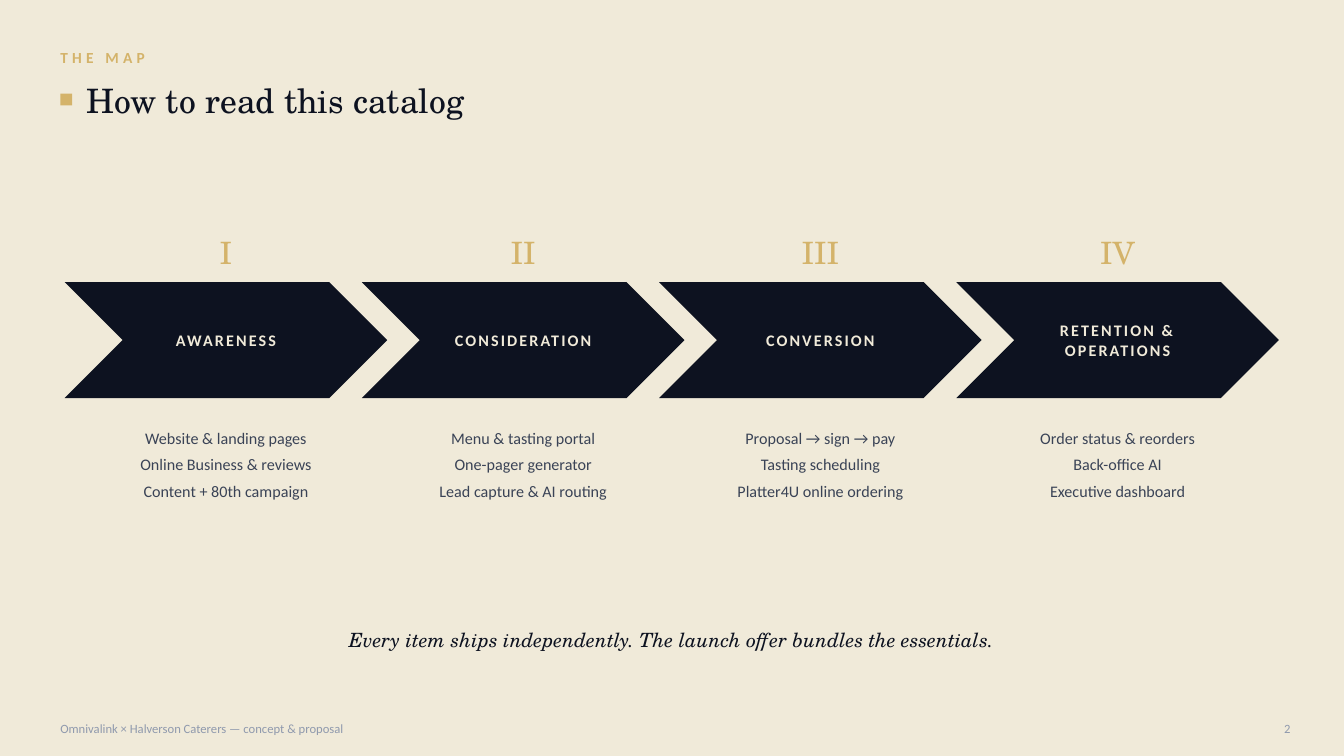
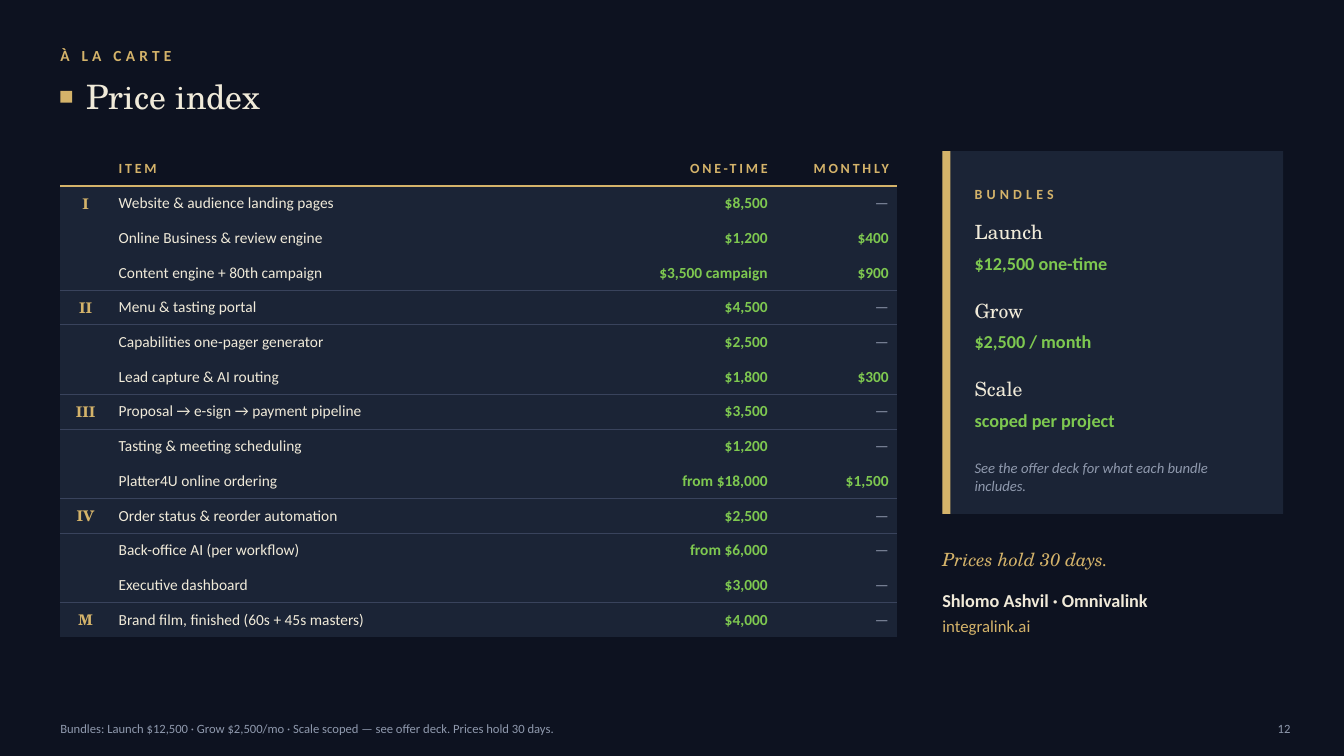
import lxml.etree
import pptx
import pptx.dml.color
import pptx.enum.shapes
import pptx.enum.text
import pptx.oxml.ns
import pptx.util

Cm = pptx.util.Cm
Pt = pptx.util.Pt
RGBColor = pptx.dml.color.RGBColor
Align = pptx.enum.text.PP_ALIGN
Anchor = pptx.enum.text.MSO_ANCHOR
Shape = pptx.enum.shapes.MSO_SHAPE
qn = pptx.oxml.ns.qn

CREAM = RGBColor(0xF0, 0xEA, 0xD9)
NAVY = RGBColor(0x0D, 0x12, 0x20)
PANEL = RGBColor(0x1B, 0x24, 0x36)
RULE = RGBColor(0x39, 0x43, 0x5C)
SLATE = RGBColor(0x3A, 0x43, 0x56)
GOLD = RGBColor(0xD4, 0xB3, 0x6A)
GREEN = RGBColor(0x7E, 0xC8, 0x50)
MUTED = RGBColor(0x8F, 0x99, 0xAD)

SANS = "Calibri"
SERIF = "TeX Gyre Schola"
NO_GRID_STYLE = "{2D5ABB26-0587-4C30-8999-92F81FD0307C}"

NO_MARGINS = dict(margin_left=0, margin_top=0, margin_right=0, margin_bottom=0)
CELL_FORMAT = dict(
    margin_left=Cm(0.2), margin_top=Cm(0.08), margin_right=Cm(0.2), margin_bottom=Cm(0.08),
    vertical_anchor=Anchor.MIDDLE,
)


def style(name, size, color, align=Align.LEFT, after=0, spacing=0, **font):
    """Format values of a paragraph; spacing is the letter spacing in points."""
    return dict(
        font=dict(name=name, size=Pt(size), **font),
        color=color,
        para=dict(alignment=align, space_after=Pt(after)),
        spacing=spacing,
    )


KICKER = style(SANS, 11, GOLD, spacing=3, bold=True)
FOOTER = style(SANS, 9, MUTED)
PAGE_NUMBER = style(SANS, 9, MUTED, Align.RIGHT)
STAGE_NUMBER = style(SERIF, 22, GOLD, Align.CENTER)
STAGE_NAME = style(SANS, 11.5, CREAM, Align.CENTER, spacing=1.5, bold=True)
STAGE_ITEM = style(SANS, 11.5, SLATE, Align.CENTER, after=5)
CLOSING = style(SERIF, 14, NAVY, Align.CENTER, italic=True)
HEAD = style(SANS, 10, GOLD, spacing=2, bold=True)
HEAD_RIGHT = style(SANS, 10, GOLD, Align.RIGHT, spacing=2, bold=True)
GROUP = style(SERIF, 10.5, GOLD, Align.CENTER, bold=True)
ITEM = style(SANS, 11, CREAM)
PRICE = style(SANS, 11, GREEN, Align.RIGHT, bold=True)
NO_PRICE = style(SANS, 11, MUTED, Align.RIGHT)
BUNDLES_HEAD = style(SANS, 10, GOLD, spacing=3, bold=True)
BUNDLE_NAME = style(SERIF, 14, CREAM)
BUNDLE_PRICE = style(SANS, 13, GREEN, bold=True)
BUNDLE_NOTE = style(SANS, 10.5, MUTED, italic=True)
VALIDITY = style(SERIF, 13, GOLD, italic=True)
CONTACT = style(SANS, 13, CREAM, after=3, bold=True)
ADDRESS = style(SANS, 12, GOLD, after=3)

STAGES = [
    ("I", "AWARENESS",
     ["Website & landing pages", "Online Business & reviews", "Content + 80th campaign"]),
    ("II", "CONSIDERATION",
     ["Menu & tasting portal", "One-pager generator", "Lead capture & AI routing"]),
    ("III", "CONVERSION",
     ["Proposal → sign → pay", "Tasting scheduling", "Platter4U online ordering"]),
    ("IV", "RETENTION & OPERATIONS",
     ["Order status & reorders", "Back-office AI", "Executive dashboard"]),
]

PRICES = [
    ("I", "Website & audience landing pages", "$8,500", "—"),
    ("", "Online Business & review engine", "$1,200", "$400"),
    ("", "Content engine + 80th campaign", "$3,500 campaign", "$900"),
    ("II", "Menu & tasting portal", "$4,500", "—"),
    ("", "Capabilities one-pager generator", "$2,500", "—"),
    ("", "Lead capture & AI routing", "$1,800", "$300"),
    ("III", "Proposal → e-sign → payment pipeline", "$3,500", "—"),
    ("", "Tasting & meeting scheduling", "$1,200", "—"),
    ("", "Platter4U online ordering", "from $18,000", "$1,500"),
    ("IV", "Order status & reorder automation", "$2,500", "—"),
    ("", "Back-office AI (per workflow)", "from $6,000", "—"),
    ("", "Executive dashboard", "$3,000", "—"),
    ("M", "Brand film, finished (60s + 45s masters)", "$4,000", "—"),
]

BUNDLES = [
    ("Launch", "$12,500 one-time"),
    ("Grow", "$2,500 / month"),
    ("Scale", "scoped per project"),
]


def assign(target, values):
    for name, value in values.items():
        setattr(target, name, value)


def write(para, text, look):
    assign(para, look["para"])
    if not text:
        # An empty line keeps its size only through its end mark.
        mark = lxml.etree.SubElement(para._p, qn("a:endParaRPr"))
        mark.set("sz", str(look["font"]["size"].centipoints))
        return
    span = para.add_run()
    span.text = text
    assign(span.font, look["font"])
    span.font.color.rgb = look["color"]
    if look["spacing"]:
        span._r.get_or_add_rPr().set("spc", str(int(look["spacing"] * 100)))


def add_border(cell, side, color, width):
    """Draw one cell edge; call it before the cell gets its fill."""
    line = lxml.etree.SubElement(
        cell._tc.get_or_add_tcPr(), qn("a:" + side), w=str(Pt(width)))
    fill = lxml.etree.SubElement(line, qn("a:solidFill"))
    lxml.etree.SubElement(fill, qn("a:srgbClr"), val=str(color))


class Catalog:
    def __init__(self):
        self.deck = pptx.Presentation()
        assign(self.deck, dict(slide_width=Cm(33.87), slide_height=Cm(19.05)))
        self.page = None

    def start_page(self, color):
        self.page = self.deck.slides.add_slide(self.deck.slide_layouts[6])
        fill = self.page.background.fill
        fill.solid()
        fill.fore_color.rgb = color

    def text(self, left, top, width, height, *lines, anchor=Anchor.MIDDLE):
        """Add a text box; each line is a (text, style) pair."""
        box = self.page.shapes.add_textbox(Cm(left), Cm(top), Cm(width), Cm(height))
        frame = box.text_frame
        assign(frame, dict(word_wrap=True, vertical_anchor=anchor, **NO_MARGINS))
        for index, line in enumerate(lines):
            write(frame.add_paragraph() if index else frame.paragraphs[0], *line)

    def shape(self, left, top, width, height, color, kind=Shape.RECTANGLE):
        box = self.page.shapes.add_shape(kind, Cm(left), Cm(top), Cm(width), Cm(height))
        box.shadow.inherit = False
        box.fill.solid()
        box.fill.fore_color.rgb = color
        box.line.fill.background()
        return box

    def chevron(self, left, top, width, height, label):
        frame = self.shape(left, top, width, height, NAVY, Shape.CHEVRON).text_frame
        assign(frame, dict(word_wrap=True, vertical_anchor=Anchor.MIDDLE))
        write(frame.paragraphs[0], label, STAGE_NAME)

    def header(self, kicker, title, ink, kicker_top, title_top, square_top):
        self.text(1.52, kicker_top, 20.32, 0.76, (kicker, KICKER))
        self.shape(1.52, square_top, 0.3, 0.3, GOLD)
        self.text(2.18, title_top, 20.32, 1.4, (title, style(SERIF, 24, ink)))

    def footer(self, note, number):
        self.text(1.52, 17.98, 25.4, 0.76, (note, FOOTER))
        self.text(31.5, 17.98, 1.02, 0.76, (str(number), PAGE_NUMBER))

    def cell(self, cell, text, look, color, border=None):
        assign(cell, CELL_FORMAT)
        write(cell.text_frame.paragraphs[0], text, look)
        if border:
            add_border(cell, *border)
        cell.fill.solid()
        cell.fill.fore_color.rgb = color

    def price_table(self, left, top, widths, height):
        count = len(PRICES) + 1
        frame = self.page.shapes.add_table(
            count, len(widths), Cm(left), Cm(top), Cm(sum(widths)), Cm(height))
        table = frame.table
        assign(table, dict(first_row=False, horz_banding=False))
        table._tbl.tblPr.find(qn("a:tableStyleId")).text = NO_GRID_STYLE
        for column, width in zip(table.columns, widths):
            column.width = Cm(width)
        for row in table.rows:
            row.height = Cm(height) // count

        heads = ("", "ITEM", "ONE-TIME", "MONTHLY")
        for column, head in enumerate(heads):
            look = HEAD_RIGHT if column > 1 else HEAD
            self.cell(table.cell(0, column), head, look, NAVY, ("lnB", GOLD, 1))
        for row, values in enumerate(PRICES, 1):
            starts_group = values[0] and row > 1
            border = ("lnT", RULE, 0.75) if starts_group else None
            for column, value in enumerate(values):
                look = (GROUP, ITEM, PRICE, PRICE)[column]
                if value == "—":
                    look = NO_PRICE
                self.cell(table.cell(row, column), value, look, PANEL, border)


def add_map_page(catalog):
    catalog.start_page(CREAM)
    catalog.header("THE MAP", "How to read this catalog", NAVY, 1.07, 1.83, 2.36)
    for index, (number, name, items) in enumerate(STAGES):
        left = 1.63 + 7.49 * index
        catalog.text(left + 0.89, 5.54, 6.35, 1.27, (number, STAGE_NUMBER),
                     anchor=Anchor.BOTTOM)
        catalog.chevron(left, 7.11, 8.13, 2.92, name)
        catalog.text(left + 0.38, 10.8, 7.37, 3.3,
                     *[(item, STAGE_ITEM) for item in items], anchor=Anchor.TOP)
    catalog.text(
        3.81, 15.62, 26.24, 1.02,
        ("Every item ships independently. The launch offer bundles the essentials.", CLOSING))
    catalog.footer("Omnivalink × Halverson Caterers — concept & proposal", 2)


def add_price_page(catalog):
    catalog.start_page(NAVY)
    catalog.header("À LA CARTE", "Price index", CREAM, 1.02, 1.73, 2.29)
    catalog.price_table(1.52, 3.81, (1.27, 12.7, 4.06, 3.05), 12.26)

    side, inner, inner_width = 23.75, 24.56, 7.06
    catalog.shape(side, 3.81, 8.59, 9.14, PANEL)
    catalog.shape(side, 3.81, 0.2, 9.14, GOLD)
    catalog.text(inner, 4.52, inner_width, 0.71, ("BUNDLES", BUNDLES_HEAD))
    for index, (name, price) in enumerate(BUNDLES):
        top = 5.49 + 1.98 * index
        catalog.text(inner, top, inner_width, 0.71, (name, BUNDLE_NAME))
        catalog.text(inner, top + 0.76, inner_width, 0.76, (price, BUNDLE_PRICE))
    catalog.text(inner, 11.38, inner_width, 1.27,
                 ("See the offer deck for what each bundle includes.", BUNDLE_NOTE))
    catalog.text(side, 13.72, 8.59, 0.76, ("Prices hold 30 days.", VALIDITY))
    catalog.text(side, 14.86, 8.59, 1.9, ("Shlomo Ashvil · Omnivalink", CONTACT),
                 ("integralink.ai", ADDRESS), anchor=Anchor.TOP)
    catalog.footer(
        "Bundles: Launch $12,500 · Grow $2,500/mo · Scale scoped"
        " — see offer deck. Prices hold 30 days.", 12)


def main():
    catalog = Catalog()
    add_map_page(catalog)
    add_price_page(catalog)
    catalog.deck.save("out.pptx")


if __name__ == "__main__":
    main()
